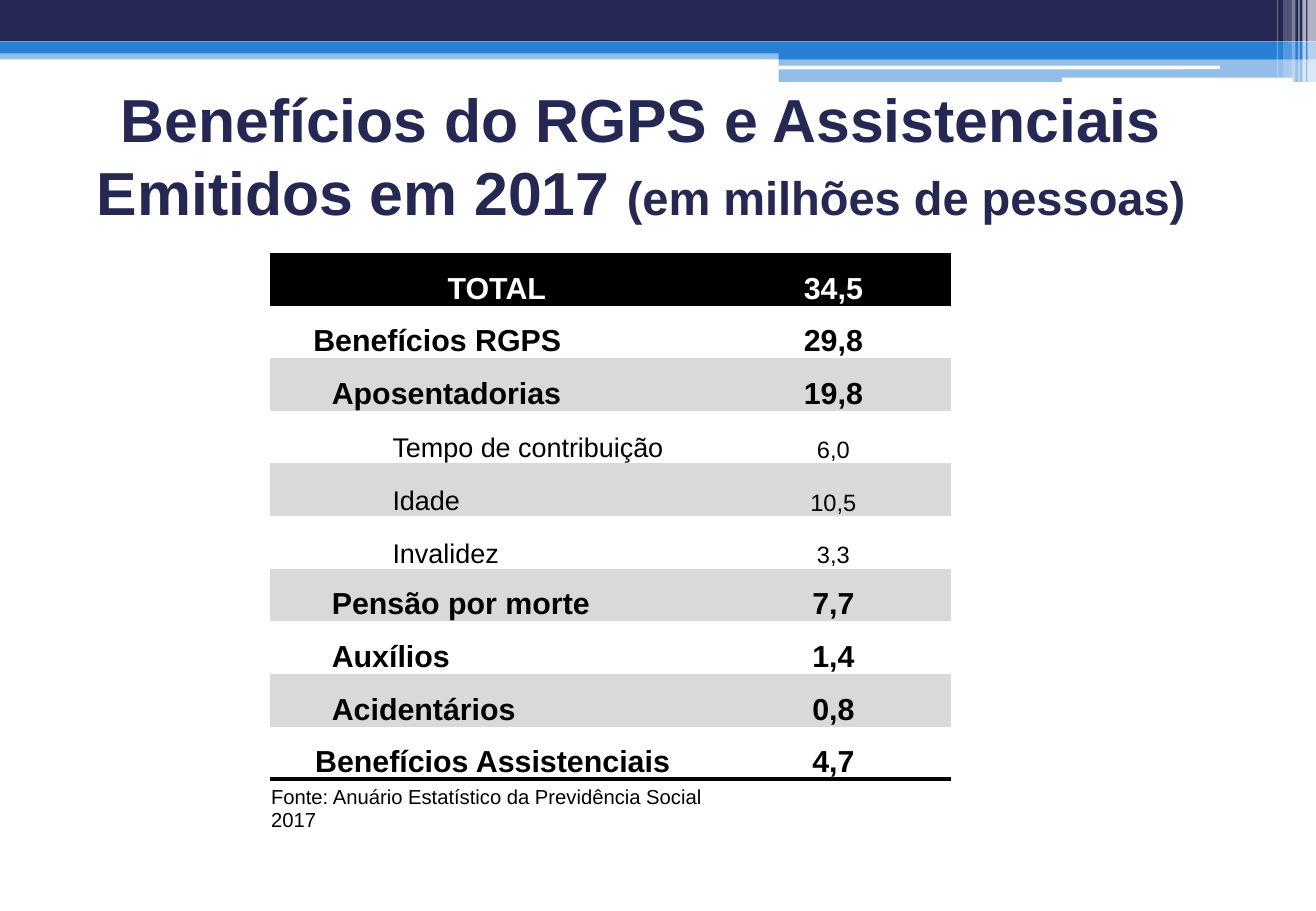
import dataclasses
import pptx
import pptx.dml.color
import pptx.enum.shapes
import pptx.enum.text
import pptx.oxml
import pptx.util
from pptx.oxml import ns

Pt = pptx.util.Pt
Align = pptx.enum.text.PP_ALIGN
Anchor = pptx.enum.text.MSO_ANCHOR
Form = pptx.enum.shapes.MSO_SHAPE


@dataclasses.dataclass(frozen=True)
class Theme:
    """Colours, font and type sizes of the slide."""
    navy: str = "242852"
    blue: str = "297FD5"
    white: str = "FFFFFF"
    black: str = "000000"
    grey: str = "D9D9D9"
    font: str = "Arial"
    title: float = 36
    unit: float = 27.9
    main: float = 18
    sub: float = 16
    count: float = 14
    note: float = 12


THEME = Theme()
PLAIN = "{2D5ABB26-0587-4C30-8999-92F81FD0307C}"
ROWS = [
    ("TOTAL", "34,5", "total"),
    ("Benefícios RGPS", "29,8", "group"),
    ("Aposentadorias", "19,8", "kind"),
    ("Tempo de contribuição", "6,0", "detail"),
    ("Idade", "10,5", "detail"),
    ("Invalidez", "3,3", "detail"),
    ("Pensão por morte", "7,7", "kind"),
    ("Auxílios", "1,4", "kind"),
    ("Acidentários", "0,8", "kind"),
    ("Benefícios Assistenciais", "4,7", "aid"),
    ("Fonte: Anuário Estatístico da Previdência Social 2017", "", "note"),
]
INDENT = {"total": 5, "group": 25, "kind": 36, "detail": 72, "aid": 0, "note": 0}


def rgb(code):
    """Turn a hex code into a colour."""
    return pptx.dml.color.RGBColor.from_string(code)


def style(run, size, color, bold=True):
    """Format one run."""
    font = run.font
    font.name, font.size, font.bold = THEME.font, Pt(size), bold
    font.color.rgb = rgb(color)


def band(slide, box, color, alpha=100, form=Form.RECTANGLE):
    """Draw one plain bar with the given opacity."""
    bar = slide.shapes.add_shape(form, *map(Pt, box))
    bar.shadow.inherit = False
    bar.line.fill.background()
    bar.fill.solid()
    bar.fill.fore_color.rgb = rgb(color)
    if alpha < 100:
        tint = bar.fill._xPr.find(".//" + ns.qn("a:srgbClr"))
        tint.append(pptx.oxml.parse_xml(
            f'<a:alpha {ns.nsdecls("a")} val="{alpha * 1000}"/>'))


def header(slide, box):
    """Draw the striped band along the top of the box."""
    left, top, width, height = box
    right = left + width
    mid = right - 318.4
    band(slide, (left, top + 28.8, width, 6.5), THEME.blue, 50)
    band(slide, (left, top, width, 24.5), THEME.navy)
    band(slide, (left, top + 24.5, width, 7.2), THEME.blue)
    band(slide, (mid, top + 28.1, right - mid, 7.2), THEME.blue)
    band(slide, (mid, top + 34.9, right - mid, height - 34.9), THEME.blue, 50)
    for x, y, wide, high in [(mid, 38.9, 261.4, 2.2), (right - 150.6, 46.1, 136.8, 2.9)]:
        band(slide, (x, top + y, wide, high), THEME.white, form=Form.ROUNDED_RECTANGLE)
    for gap, wide, high, alpha in [
            (5, 5, height, 65), (8, 2.2, height, 65), (10.4, 0.8, height, 60),
            (14.4, 2.2, height, 40), (19.4, 5, 46.1, 20), (23.2, 0.8, 46.1, 30)]:
        band(slide, (right - gap, top, wide, high), THEME.white, alpha)


def title(slide, box):
    """Fill the title placeholder and fit it to the box."""
    shape = slide.shapes.title
    shape.left, shape.top, shape.width, shape.height = map(Pt, box)
    frame = shape.text_frame
    frame.text = "Benefícios do RGPS e Assistenciais Emitidos em 2017 "
    frame.auto_size = pptx.enum.text.MSO_AUTO_SIZE.NONE
    frame.word_wrap = True
    frame.vertical_anchor = Anchor.MIDDLE
    frame.margin_top = frame.margin_bottom = 0
    para = frame.paragraphs[0]
    para.alignment = Align.CENTER
    style(para.runs[0], THEME.title, THEME.navy)
    unit = para.add_run()
    unit.text = "(em milhões de pessoas)"
    style(unit, THEME.unit, THEME.navy)


def edge(cell, side):
    """Rule one side of a cell in black."""
    cell._tc.get_or_add_tcPr().append(pptx.oxml.parse_xml(
        f'<a:{side} {ns.nsdecls("a")} w="28575"><a:solidFill>'
        f'<a:srgbClr val="{THEME.black}"/></a:solidFill></a:{side}>'))


def write(cell, text, role, value):
    """Put a label or a value into a cell."""
    cell.vertical_anchor = Anchor.BOTTOM
    cell.margin_left = cell.margin_right = cell.margin_top = Pt(0.7)
    cell.margin_bottom = 0
    if not text:
        return
    para = cell.text_frame.paragraphs[0]
    para.text = text
    center = value or role in ("total", "aid")
    para.alignment = Align.CENTER if center else Align.LEFT
    if not value:
        props = para._p.get_or_add_pPr()
        props.set("marL", str(Pt(INDENT[role])))
        props.set("indent", "0")
    size = {"detail": THEME.count if value else THEME.sub,
            "note": THEME.note}.get(role, THEME.main)
    color = THEME.white if role == "total" else THEME.black
    style(para.runs[0], size, color, role not in ("detail", "note"))


def table(slide, box):
    """Build the table of benefits in the box."""
    left, top, width, height = box
    grid = slide.shapes.add_table(len(ROWS), 2, *map(Pt, box)).table
    grid.first_row = grid.horz_banding = False
    grid._tbl.tblPr.find(ns.qn("a:tableStyleId")).text = PLAIN
    grid.columns[0].width = Pt(264)
    grid.columns[1].width = Pt(width - 264)
    for i, (label, count, role) in enumerate(ROWS):
        grid.rows[i].height = Pt(height / len(ROWS))
        shade = THEME.grey if i % 2 == 0 else THEME.white
        shade = {"total": THEME.black, "note": THEME.white}.get(role, shade)
        for j, text in enumerate((label, count)):
            cell = grid.cell(i, j)
            write(cell, text, role, j == 1)
            if role in ("aid", "note"):
                edge(cell, "lnB" if role == "aid" else "lnT")
            cell.fill.solid()
            cell.fill.fore_color.rgb = rgb(shade)


def main():
    """Build the slide and save it."""
    deck = pptx.Presentation()
    deck.slide_width, deck.slide_height = Pt(780), Pt(540)
    slide = deck.slides.add_slide(deck.slide_layouts[5])
    header(slide, (0, 0, 780, 48.6))
    title(slide, (40, 49.7, 680, 84.2))
    table(slide, (160, 150, 404, 343.2))
    deck.save("out.pptx")


if __name__ == "__main__":
    main()
